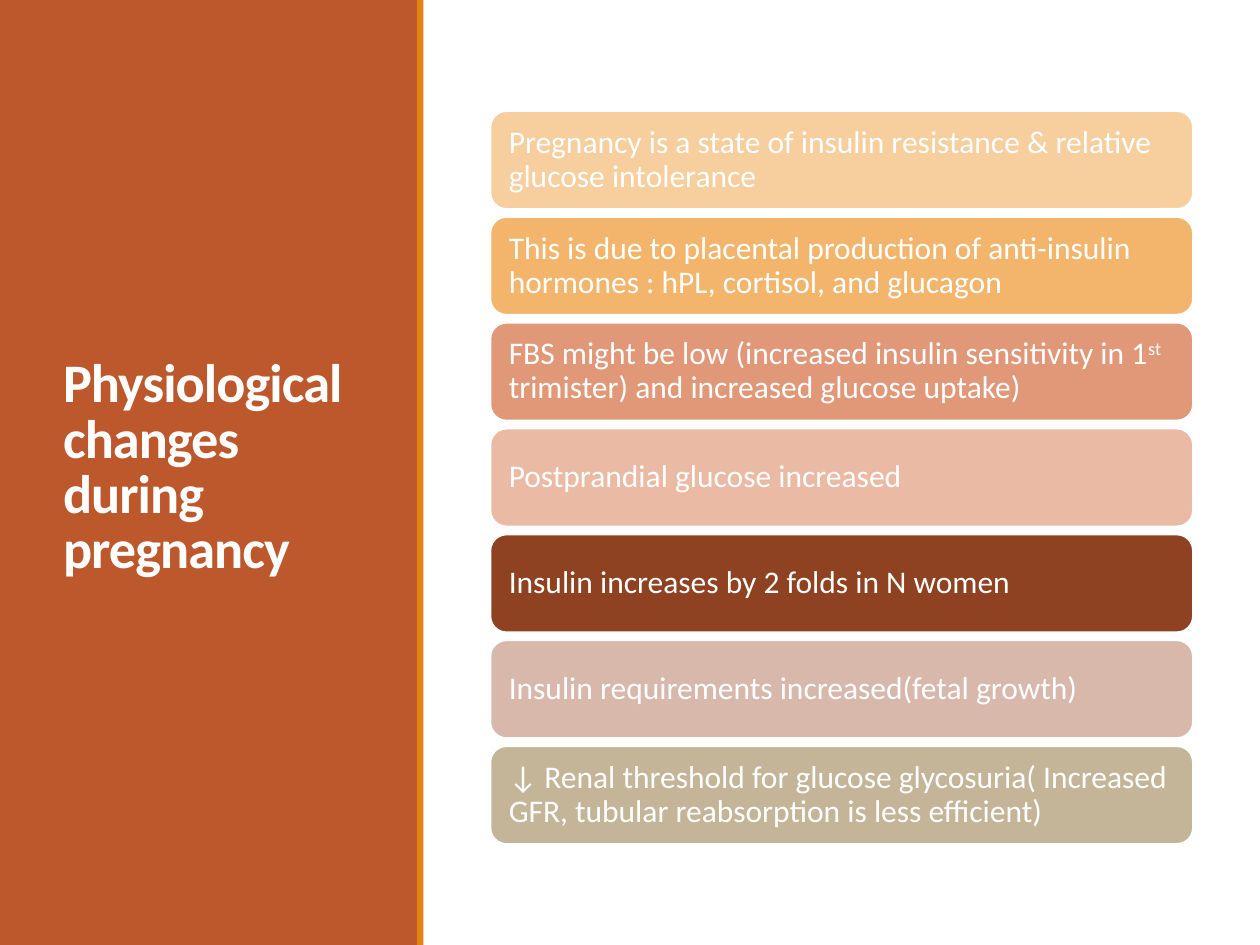
from pptx import Presentation
from pptx.dml.color import RGBColor
from pptx.enum.shapes import MSO_SHAPE as Shape
from pptx.enum.text import MSO_ANCHOR as Anchor, MSO_AUTO_SIZE as AutoSize, PP_ALIGN as Align
from pptx.util import Inches, Pt

FONT = "Calibri"
COLORS = {"white": "FFFFFF", "panel": "BD582C", "stripe": "E48312"}
TITLE = "Physiological changes during pregnancy"
# Each card: fill colour, then text spans as (text, is superscript)
CARDS = [
    ("F7CE9D", [("Pregnancy is a state of insulin resistance & relative glucose intolerance", False)]),
    ("F3B56C", [("This is due to placental production of anti-insulin hormones : hPL, cortisol, and glucagon", False)]),
    ("E09878", [("FBS might be low (increased insulin sensitivity in 1", False), ("st ", True),
                ("trimister) and increased glucose uptake)", False)]),
    ("EABAA5", [("Postprandial glucose increased", False)]),
    ("8E4221", [("Insulin increases by 2 folds in N women", False)]),
    ("D7B8AB", [("Insulin requirements increased(fetal growth)", False)]),
    ("C5B598", [("↓ Renal threshold for glucose glycosuria( Increased GFR, tubular reabsorption is less efficient)", False)]),
]
WIDTH, HEIGHT = 10, 7.5
PANEL_WIDTH, STRIPE_LEFT, STRIPE_WIDTH = 3.32, 3.31, 0.05
CARD_LEFT, CARD_TOP, CARD_WIDTH, CARD_HEIGHT = 3.89, 0.88, 5.58, 0.78
CARD_PITCH, CARD_INSET = 0.84, 0.11


def add_filled(page, kind, area, color):
    shape = page.shapes.add_shape(kind, *map(Inches, area))
    shape.shadow.inherit = False
    shape.fill.solid()
    shape.fill.fore_color.rgb = RGBColor.from_string(color)
    shape.line.fill.background()
    return shape


def style_font(font, size, bold=False):
    font.name, font.size, font.bold = FONT, Pt(size), bold
    font.color.rgb = RGBColor.from_string(COLORS["white"])


def fill_title(title):
    title.left, title.top, title.width, title.height = map(Inches, (0.4, 0.57, 2.53, 6.31))
    frame = title.text_frame
    frame.text = TITLE
    frame.word_wrap, frame.auto_size = True, AutoSize.NONE
    frame.vertical_anchor = Anchor.MIDDLE
    paragraph = frame.paragraphs[0]
    paragraph.alignment, paragraph.line_spacing = Align.LEFT, 0.85
    span = paragraph.runs[0]
    style_font(span.font, 31, bold=True)
    span.font._element.set("spc", "-50")


def add_card(page, row, color, spans):
    area = (CARD_LEFT, CARD_TOP + row * CARD_PITCH, CARD_WIDTH, CARD_HEIGHT)
    card = add_filled(page, Shape.ROUNDED_RECTANGLE, area, color)
    card.line.color.rgb = RGBColor.from_string(COLORS["white"])
    card.line.width = Pt(1.25)
    frame = card.text_frame
    frame.word_wrap, frame.vertical_anchor = True, Anchor.MIDDLE
    frame.margin_left = frame.margin_right = Inches(CARD_INSET)
    frame.margin_top = frame.margin_bottom = Inches(CARD_INSET)
    paragraph = frame.paragraphs[0]
    paragraph.alignment, paragraph.line_spacing = Align.LEFT, 0.9
    for text, superscript in spans:
        span = paragraph.add_run()
        span.text = text
        style_font(span.font, 18)
        if superscript:
            span.font._element.set("baseline", "30000")


def main():
    deck = Presentation()
    deck.slide_width, deck.slide_height = Inches(WIDTH), Inches(HEIGHT)
    page = deck.slides.add_slide(deck.slide_layouts[5])
    title = page.shapes.title
    panel = add_filled(page, Shape.RECTANGLE, (0, 0, PANEL_WIDTH, HEIGHT), COLORS["panel"])
    title._element.addprevious(panel._element)  # keep the panel behind the title
    fill_title(title)
    add_filled(page, Shape.RECTANGLE, (STRIPE_LEFT, 0, STRIPE_WIDTH, HEIGHT), COLORS["stripe"])
    for row, (color, spans) in enumerate(CARDS):
        add_card(page, row, color, spans)
    deck.save("out.pptx")


if __name__ == "__main__":
    main()
